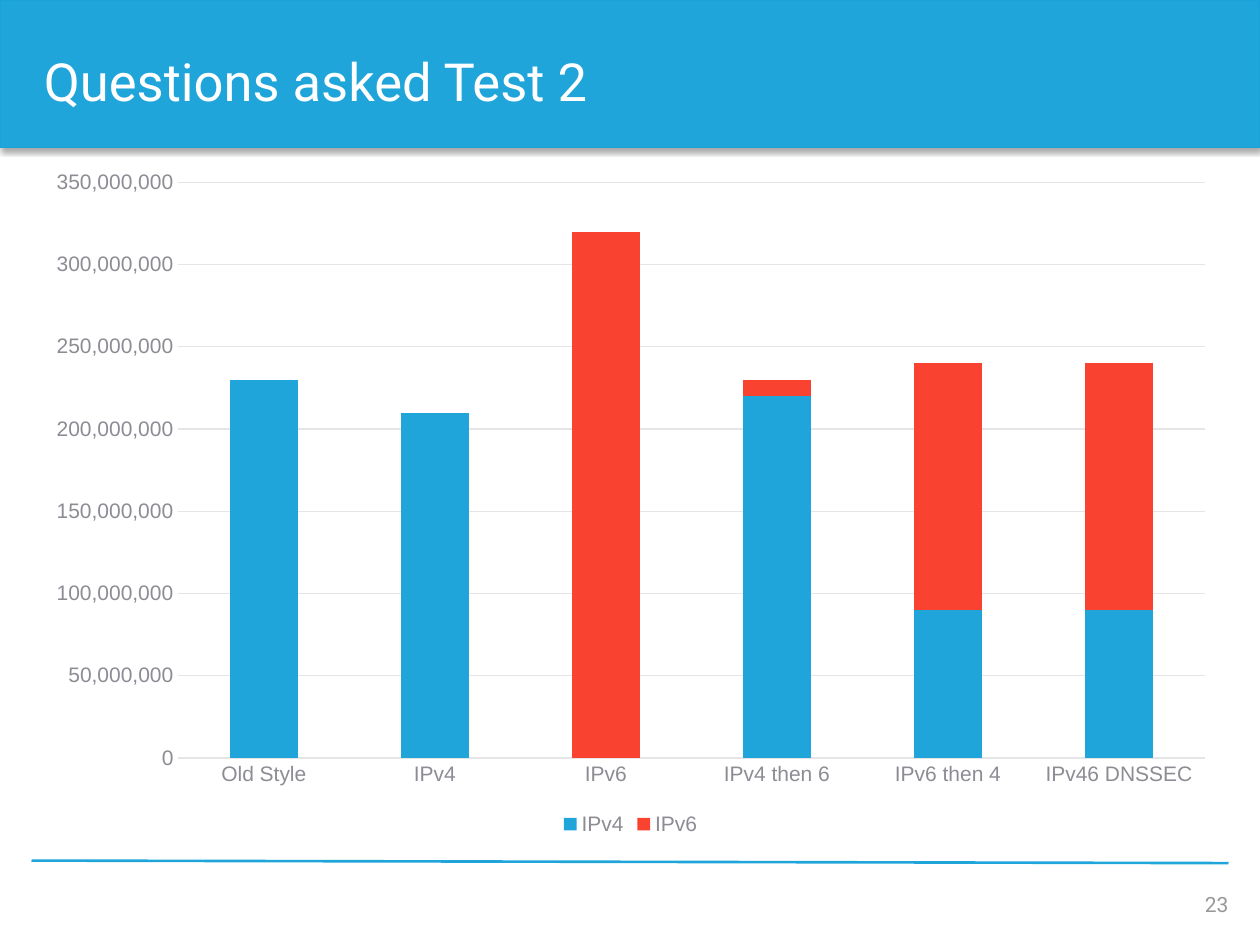
from lxml import etree
from pptx import Presentation
from pptx.chart.data import CategoryChartData
from pptx.dml.color import RGBColor
from pptx.enum.chart import XL_CHART_TYPE, XL_LEGEND_POSITION, XL_TICK_MARK
from pptx.enum.shapes import MSO_CONNECTOR, MSO_SHAPE
from pptx.enum.text import MSO_ANCHOR, PP_ALIGN
from pptx.oxml import parse_xml
from pptx.oxml.ns import nsdecls, qn
from pptx.util import Inches, Pt

STACKED = XL_CHART_TYPE.COLUMN_STACKED
BOTTOM = XL_LEGEND_POSITION.BOTTOM
NO_TICK = XL_TICK_MARK.NONE
STRAIGHT = MSO_CONNECTOR.STRAIGHT
RECTANGLE = MSO_SHAPE.RECTANGLE
MIDDLE = MSO_ANCHOR.MIDDLE
LEFT, RIGHT = PP_ALIGN.LEFT, PP_ALIGN.RIGHT

COLORS = {
    "blue": "1FA5DA",
    "edge": "1AA3DA",
    "red": "F94330",
    "label": "8D8C94",
    "grid": "E5E4E6",
    "number": "98989A",
    "white": "FFFFFF",
}


def color(name):
    return RGBColor.from_string(COLORS[name])


def set_font(font, name, size, color_name):
    font.name = name
    font.size = Pt(size)
    font.color.rgb = color(color_name)


deck = Presentation()
deck.slide_width = Inches(10)
deck.slide_height = Inches(7.5)
page = deck.slides.add_slide(deck.slide_layouts[6])

banner = page.shapes.add_shape(RECTANGLE, 0, 0, Inches(10), Inches(1.17))
banner.fill.solid()
banner.fill.fore_color.rgb = color("blue")
banner.line.color.rgb = color("edge")
banner.line.width = Pt(0.75)
banner.shadow.inherit = False
effects = banner._element.spPr.find(qn("a:effectLst"))
effects.append(parse_xml(
    f'<a:outerShdw {nsdecls("a")} blurRad="{Pt(3.1)}" dist="{Pt(1.8)}" dir="5400000" '
    'rotWithShape="0"><a:srgbClr val="000000"><a:alpha val="35000"/></a:srgbClr></a:outerShdw>'
))

footer_rule = page.shapes.add_connector(
    STRAIGHT, Inches(0.25), Inches(6.83), Inches(9.75), Inches(6.85)
)
footer_rule.line.color.rgb = color("blue")
footer_rule.line.width = Pt(1.5)
etree.SubElement(footer_rule._element.spPr, qn("a:effectLst"))

questions = CategoryChartData(number_format="#,##0")
questions.categories = [
    "Old Style", "IPv4", "IPv6", "IPv4 then 6", "IPv6 then 4", "IPv46 DNSSEC"
]
millions = {
    "IPv4": (230, 210, 0, 220, 90, 90),
    "IPv6": (0, 0, 320, 10, 150, 150),
}
for protocol, counts in millions.items():
    questions.add_series(protocol, [count * 1_000_000 for count in counts])

chart = page.shapes.add_chart(
    STACKED, Inches(0.26), Inches(1.25), Inches(9.49), Inches(5.42), questions
).chart
chart.has_title = False
set_font(chart.font, "Arial", 12, "label")
chart.has_legend = True
chart.legend.position = BOTTOM
chart.legend.include_in_layout = False
set_font(chart.legend.font, "Arial", 12, "label")

plot = chart.plots[0]
plot.gap_width = 150
plot.overlap = 100
plot.vary_by_categories = False
for series, name in zip(plot.series, ("blue", "red")):
    series.format.fill.solid()
    series.format.fill.fore_color.rgb = color(name)

for axis in (chart.category_axis, chart.value_axis):
    axis.major_tick_mark = NO_TICK
    axis.minor_tick_mark = NO_TICK
    set_font(axis.tick_labels.font, "Arial", 12, "label")

values = chart.value_axis
values.minimum_scale = 0
values.maximum_scale = 350_000_000
values.major_unit = 50_000_000
values.tick_labels.number_format = "#,##0"
values.tick_labels.number_format_is_linked = False
values.format.line.fill.background()
values.has_major_gridlines = True
for line in (chart.category_axis.format.line, values.major_gridlines.format.line):
    line.color.rgb = color("grid")
    line.width = Pt(0.75)

texts = [
    ("23", (7.42, 6.85, 2.33, 0.4), (0, 0.25, 0, 0), RIGHT, 12, "number", 1.0),
    ("Questions asked Test 2", (0.25, 0.26, 9.51, 0.83), (0.1, 0.05, 0.1, 0.05),
     LEFT, 30, "white", 0.9),
]
for text, place, insets, align, size, name, spacing in texts:
    box = page.shapes.add_textbox(*map(Inches, place))
    frame = box.text_frame
    frame.word_wrap = True
    frame.vertical_anchor = MIDDLE
    (frame.margin_left, frame.margin_top,
     frame.margin_right, frame.margin_bottom) = map(Inches, insets)
    para = frame.paragraphs[0]
    para.text = text
    para.alignment = align
    para.line_spacing = spacing
    set_font(para.font, "Roboto", size, name)

deck.save("out.pptx")
